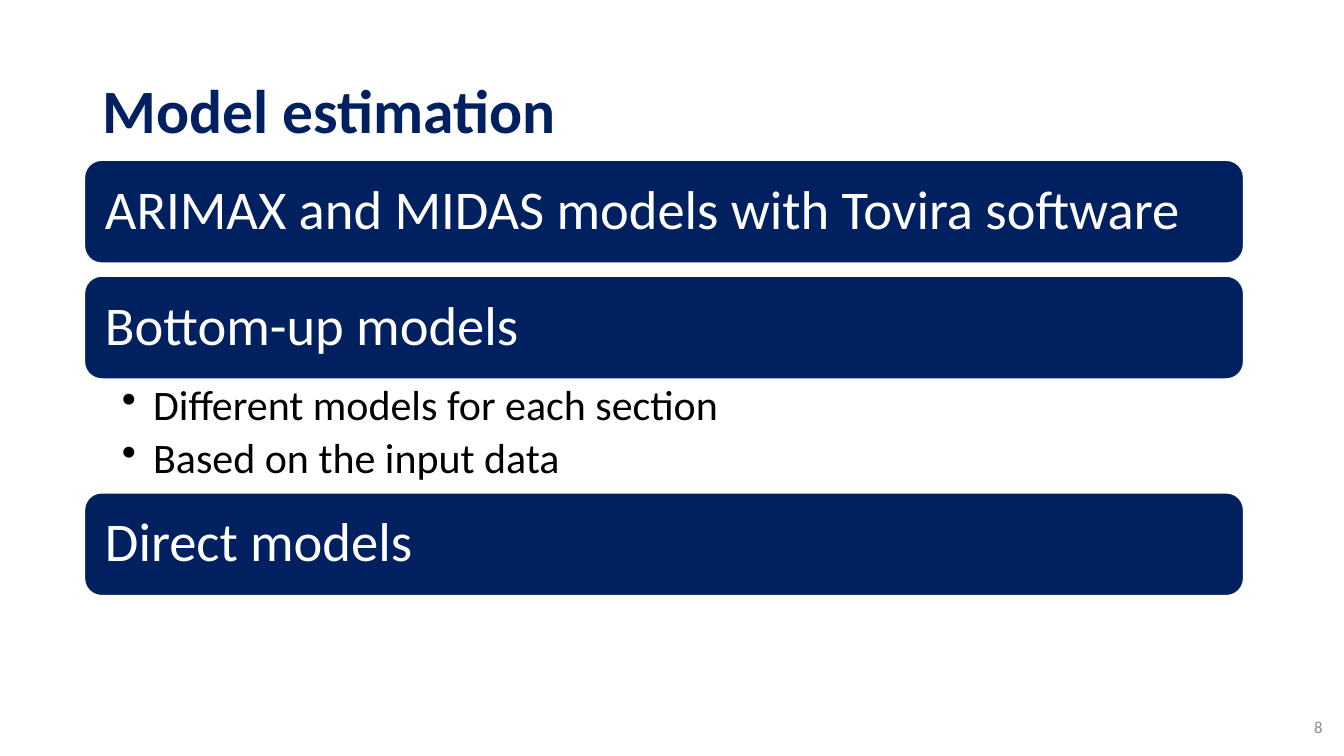
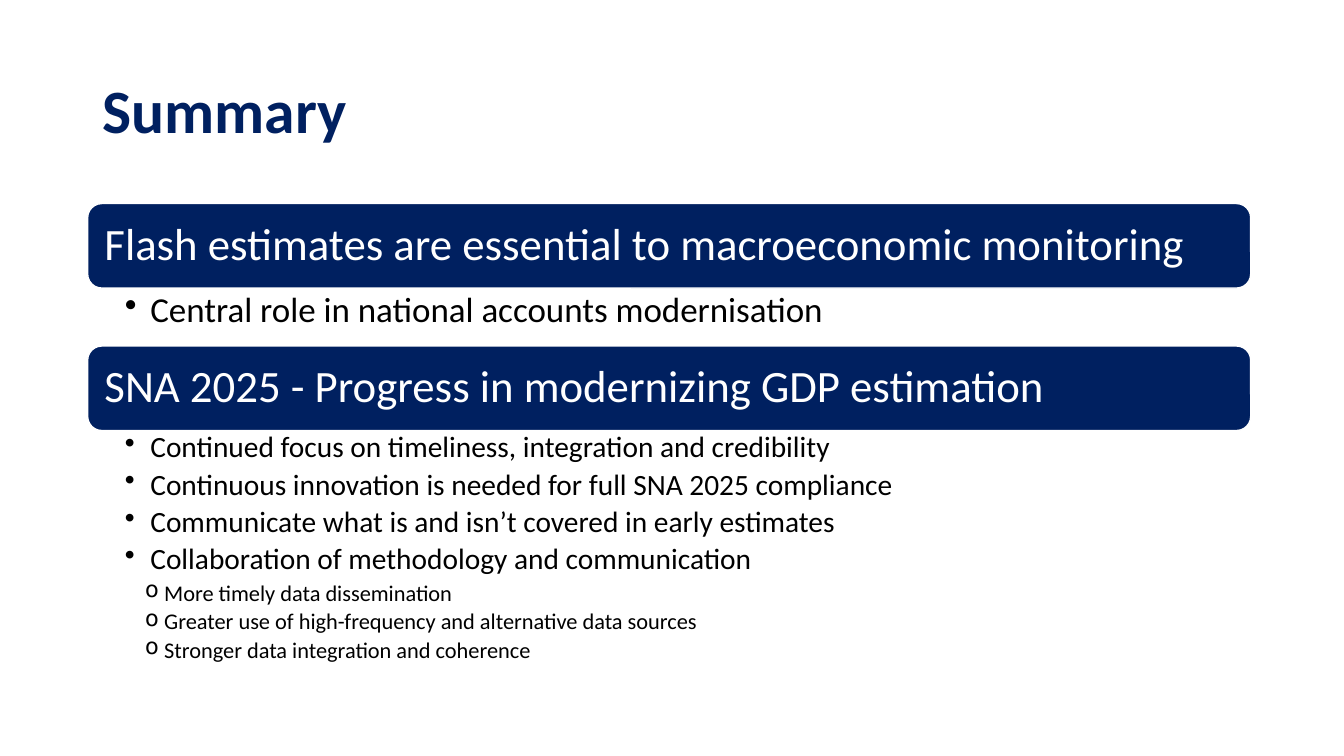
from dataclasses import dataclass

from lxml import etree
from pptx import Presentation
from pptx.dml.color import RGBColor
from pptx.enum import shapes, text
from pptx.oxml import ns
from pptx.util import Cm, Pt

NAVY = RGBColor(0x00, 0x20, 0x60)
WHITE = RGBColor(0xFF, 0xFF, 0xFF)
BLACK = RGBColor(0x00, 0x00, 0x00)
GREY = RGBColor(0x8C, 0x8C, 0x8C)
FONT = "Calibri"


@dataclass
class Bullet:
    wording: str
    size: int
    mark: str = "•"
    left: float = 0.64
    hanging: float = 0.64


@dataclass
class Section:
    heading: str
    body_height: float = 0
    bullets: tuple = ()
    body_inset: float = 0.1


def write_text(paragraph, wording, size, color, bold=False, line_spacing=0.9,
               align=text.PP_ALIGN.LEFT):
    paragraph.alignment = align
    paragraph.line_spacing = line_spacing
    run = paragraph.add_run()
    run.text = wording
    run.font.name = FONT
    run.font.size = Pt(size)
    run.font.bold = bold
    run.font.color.rgb = color


def set_frame(shape, horizontal=0.25, vertical=0.13, anchor=text.MSO_ANCHOR.MIDDLE):
    frame = shape.text_frame
    frame.word_wrap = True
    frame.vertical_anchor = anchor
    frame.margin_left = frame.margin_right = Cm(horizontal)
    frame.margin_top = frame.margin_bottom = Cm(vertical)
    return frame


def add_label(slide, left, top, width, height, wording, **text_format):
    box = slide.shapes.add_textbox(Cm(left), Cm(top), Cm(width), Cm(height))
    write_text(set_frame(box).paragraphs[0], wording, **text_format)


def add_title(slide, wording):
    add_label(slide, 2.34, 1.02, 29.21, 3.68, wording, size=44, color=NAVY, bold=True)


def add_page_number(slide, number):
    add_label(slide, 25.96, 17.81, 7.62, 1.02, number, size=12, color=GREY,
              line_spacing=1.0, align=text.PP_ALIGN.RIGHT)


def add_bar(slide, left, top, width, height, wording, size):
    bar = slide.shapes.add_shape(shapes.MSO_SHAPE.ROUNDED_RECTANGLE,
                                 Cm(left), Cm(top), Cm(width), Cm(height))
    bar.shadow.inherit = False
    bar.fill.solid()
    bar.fill.fore_color.rgb = NAVY
    bar.line.color.rgb = WHITE
    bar.line.width = Pt(1)
    inset = size * 0.01
    write_text(set_frame(bar, inset, inset).paragraphs[0], wording, size, WHITE)


def add_bullets(slide, left, top, width, height, bullets, inset):
    box = slide.shapes.add_textbox(Cm(left), Cm(top), Cm(width), Cm(height))
    frame = set_frame(box, 0.94, inset, text.MSO_ANCHOR.TOP)
    for index, bullet in enumerate(bullets):
        paragraph = frame.add_paragraph() if index else frame.paragraphs[0]
        properties = paragraph._p.get_or_add_pPr()
        properties.set("marL", str(Cm(bullet.left)))
        properties.set("indent", str(-Cm(bullet.hanging)))
        etree.SubElement(properties, ns.qn("a:buChar"), char=bullet.mark)
        paragraph.space_after = Pt(bullet.size * 0.19)
        write_text(paragraph, bullet.wording, bullet.size, BLACK)


def add_sections(slide, left, top, width, bar_height, heading_size, sections):
    for section in sections:
        add_bar(slide, left, top, width, bar_height, section.heading, heading_size)
        top += bar_height
        if section.bullets:
            add_bullets(slide, left, top, width, section.body_height,
                        section.bullets, section.body_inset)
        top += section.body_height


def add_slide(presentation, title):
    slide = presentation.slides.add_slide(presentation.slide_layouts[6])
    add_title(slide, title)
    return slide


def build_model_estimation(presentation):
    slide = add_slide(presentation, "Model estimation")
    model_bullets = tuple(
        Bullet(wording, 30, left=0.79, hanging=0.79)
        for wording in ("Different models for each section", "Based on the input data"))
    add_sections(slide, 2.13, 4.04, 29.21, 2.59, 39, [
        Section("ARIMAX and MIDAS models with Tovira software", 0.33),
        Section("Bottom-up models", 2.87, model_bullets, 0.13),
        Section("Direct models"),
    ])
    add_page_number(slide, "8")


def build_summary(presentation):
    slide = add_slide(presentation, "Summary")
    progress = tuple(Bullet(wording, 21) for wording in (
        "Continued focus on timeliness, integration and credibility",
        "Continuous innovation is needed for full SNA 2025 compliance",
        "Communicate what is and isn’t covered in early estimates",
        "Collaboration of methodology and communication",
    ))
    details = tuple(Bullet(wording, 16, "o", 0.99, 0.48) for wording in (
        "More timely data dissemination",
        "Greater use of high-frequency and alternative data sources",
        "Stronger data integration and coherence",
    ))
    add_sections(slide, 2.21, 5.13, 29.31, 2.13, 32, [
        Section("Flash estimates are essential to macroeconomic monitoring", 1.46,
                (Bullet("Central role in national accounts modernisation", 25),)),
        Section("SNA 2025 - Progress in modernizing GDP estimation", 6.25,
                progress + details, 0.05),
    ])


def main():
    presentation = Presentation()
    presentation.slide_width = Cm(33.87)
    presentation.slide_height = Cm(19.05)
    build_model_estimation(presentation)
    build_summary(presentation)
    presentation.save("out.pptx")


if __name__ == "__main__":
    main()
